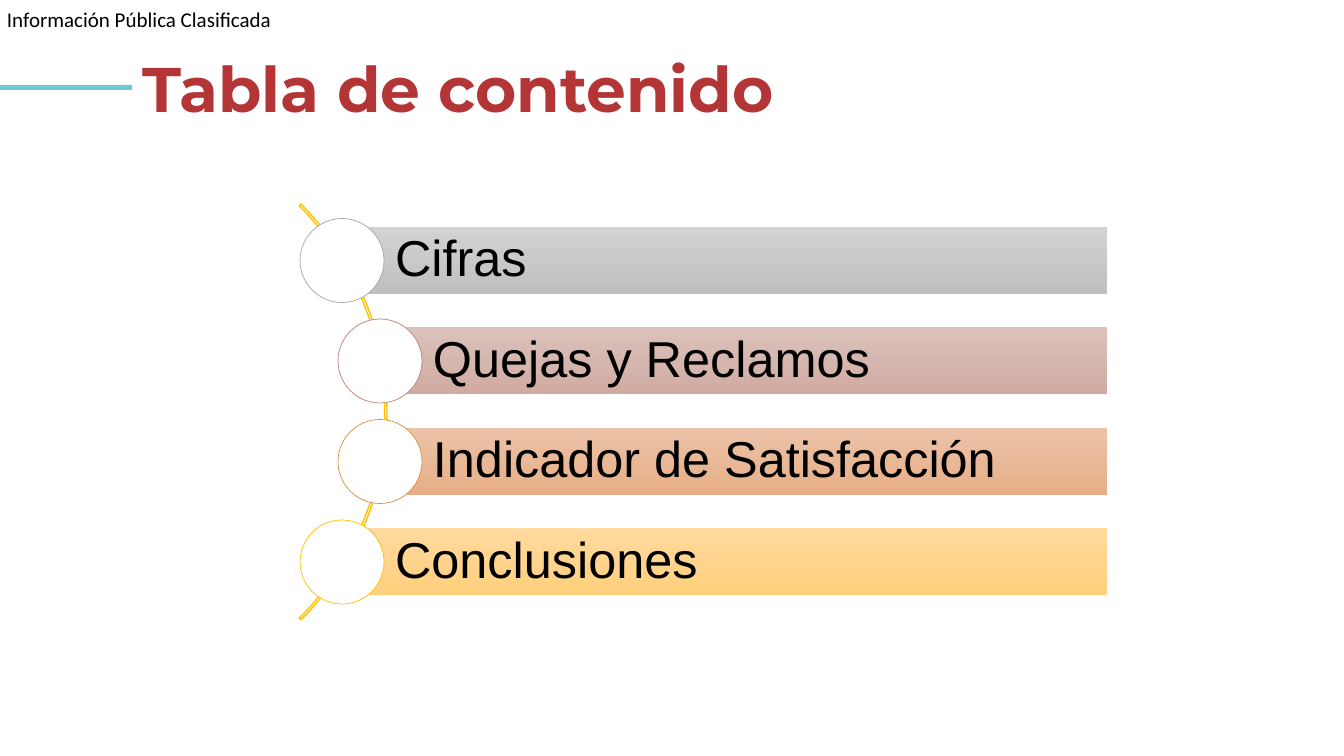
import pptx
import pptx.util
import pptx.dml.color
import pptx.enum.shapes
import pptx.enum.text

PX = 914400 / 100.8
SHAPE = pptx.enum.shapes.MSO_SHAPE
ANCHOR = pptx.enum.text.MSO_ANCHOR

HEADER = "Información Pública Clasificada"
TITLE = "Tabla de contenido"
# text, left, gradient top, gradient bottom, circle outline
TOPICS = [
    ("Cifras", 342, "D2D2D2", "C0C0C0", "A5A5A5"),
    ("Quejas y Reclamos", 380, "DBC2BB", "D0ABA1", "BB8276"),
    ("Indicador de Satisfacción", 380, "EBC3A8", "E7AE86", "D98F3F"),
    ("Conclusiones", 342, "FFD99E", "FFCF7C", "FFC000"),
]
BAR_TOP, BAR_RIGHT, BAR_HEIGHT, BAR_PITCH, CIRCLE = 227, 1107, 67, 100.5, 84


def px(length):
    """Turn pixels into EMU."""
    return pptx.util.Emu(round(length * PX))


def color(value):
    """Turn a hex string into a colour."""
    return pptx.dml.color.RGBColor.from_string(value)


def write(box, text, size, font, ink="000000", bold=False, spacing=None,
          insets=None, anchor=ANCHOR.TOP, wrap=True):
    """Put one formatted left-aligned paragraph into a box."""
    frame = box.text_frame
    frame.word_wrap = wrap
    frame.auto_size = pptx.enum.text.MSO_AUTO_SIZE.NONE
    frame.vertical_anchor = anchor
    if insets:
        (frame.margin_left, frame.margin_top,
         frame.margin_right, frame.margin_bottom) = map(px, insets)
    para = frame.paragraphs[0]
    para.alignment = pptx.enum.text.PP_ALIGN.LEFT
    if spacing:
        para.line_spacing = spacing
    span = para.add_run()
    span.text = text
    span.font.size = pptx.util.Pt(size)
    span.font.name = font
    span.font.bold = bold
    span.font.color.rgb = color(ink)


def draw(page, kind, left, top, width, height, fill=None, line=None, weight=0.5):
    """Add a preset shape with a plain, gradient or absent fill."""
    shape = page.shapes.add_shape(kind, px(left), px(top), px(width), px(height))
    shape.shadow.inherit = False
    if fill is None:
        shape.fill.background()
    elif isinstance(fill, tuple):
        shape.fill.gradient()
        shape.fill.gradient_angle = 270
        for stop, value in zip(shape.fill.gradient_stops, fill):
            stop.color.rgb = color(value)
    else:
        shape.fill.solid()
        shape.fill.fore_color.rgb = color(fill)
    if line:
        shape.line.color.rgb = color(line)
        shape.line.width = pptx.util.Pt(weight)
    else:
        shape.line.fill.background()
    return shape


def main():
    """Build the contents slide."""
    deck = pptx.Presentation()
    deck.slide_width, deck.slide_height = px(1344), px(756)
    page = deck.slides.add_slide(deck.slide_layouts[5])

    title = page.shapes.title
    title.left, title.top, title.width, title.height = map(px, (132, 49, 850, 83))
    write(title, TITLE, 45, "Montserrat", ink="B43535", bold=True,
          spacing=pptx.util.Pt(51))

    header = page.shapes.add_textbox(px(7), px(7), px(270), px(25))
    write(header, HEADER, 15, "Calibri", insets=(0, 0, 0, 0), wrap=False)
    draw(page, SHAPE.RECTANGLE, 0, 85, 132, 5, fill="6FC8D2")

    arc = draw(page, SHAPE.BLOCK_ARC, -201, 118, 588, 588, line="FFC000", weight=1)
    for index, value in enumerate((189, 27, 0.004)):
        arc.adjustments[index] = value

    for row, (text, left, light, dark, outline) in enumerate(TOPICS):
        top = BAR_TOP + row * BAR_PITCH
        bar = draw(page, SHAPE.RECTANGLE, left, top, BAR_RIGHT - left, BAR_HEIGHT,
                   fill=(light, dark))
        write(bar, text, 36, "Arial", spacing=0.9, insets=(53, 10, 10, 10),
              anchor=ANCHOR.MIDDLE)
        draw(page, SHAPE.OVAL, left - CIRCLE / 2, top + (BAR_HEIGHT - CIRCLE) / 2,
             CIRCLE, CIRCLE, fill="FFFFFF", line=outline)

    deck.save("out.pptx")


if __name__ == "__main__":
    main()
